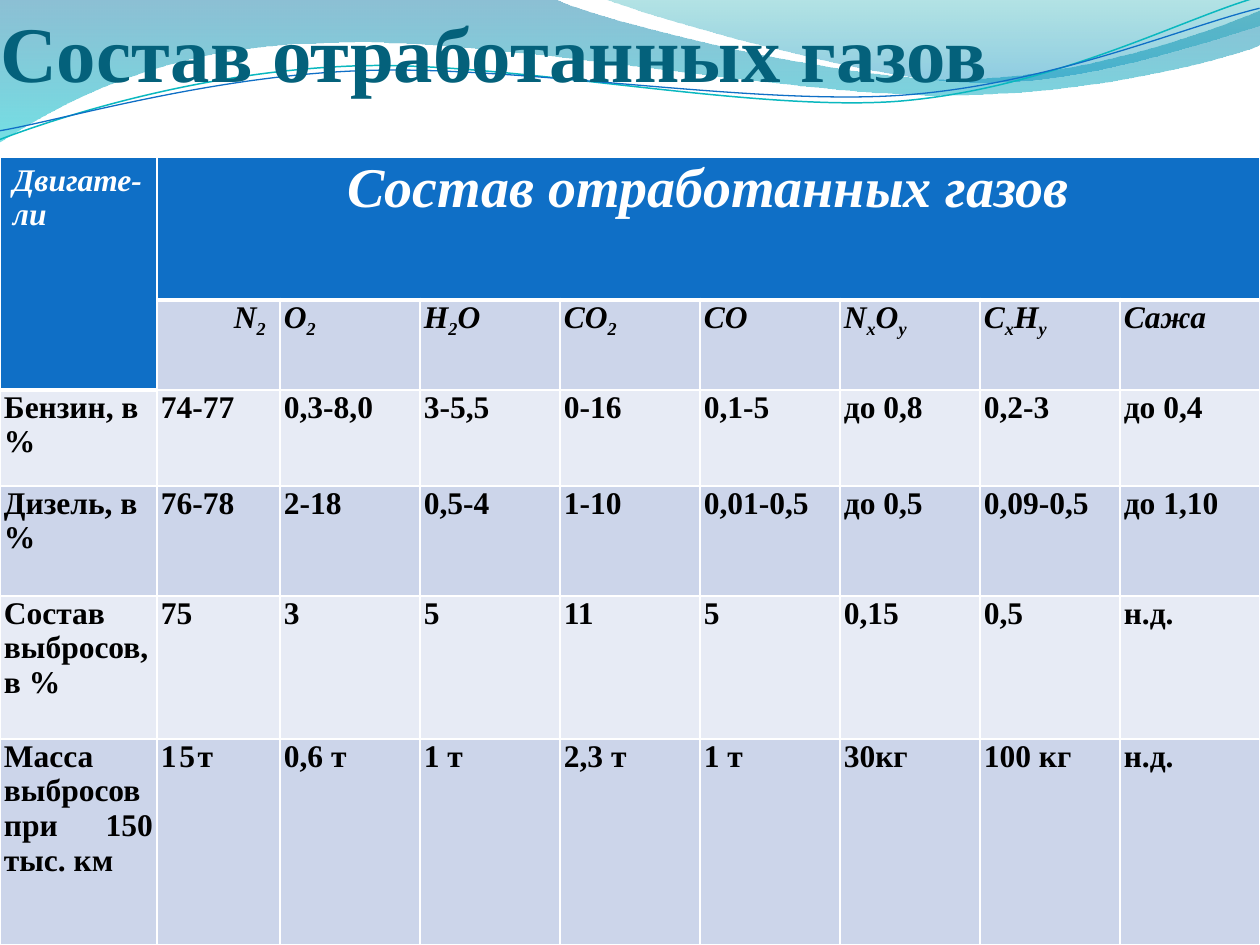
import pptx
import pptx.dml.color
import pptx.enum.text
import pptx.oxml
import pptx.oxml.ns
import pptx.util

PX = 914400 / 126
THEME = {
    "font": "Times New Roman", "title": "04617B", "header": "0F6FC6",
    "band_dark": "CCD5EA", "band_light": "E7EBF5", "white": "FFFFFF", "black": "000000",
    "title_size": 45, "heading_size": 32, "cell_size": 18,
}
ALIGN = pptx.enum.text.PP_ALIGN
NAMESPACE = pptx.oxml.ns.nsdecls("a")
qn = pptx.oxml.ns.qn
rgb = pptx.dml.color.RGBColor.from_string


def px(length):
    return pptx.util.Emu(round(length * PX))


def style_run(run, size, color, italic=False):
    run.font.name = THEME["font"]
    run.font.size = pptx.util.Pt(size)
    run.font.color.rgb = rgb(color)
    run.font.bold = True
    run.font.italic = italic


deck = pptx.Presentation()
deck.slide_width, deck.slide_height = px(1260), px(945)
page = deck.slides.add_slide(deck.slide_layouts[5])

# Waves: a pair of numbers is a straight step, six numbers are a Bezier step
# Each wave: start, steps, gradient stops (colour, opacity %) or None, line or None
waves = [
    ((0, 0), [(554, -1), (600, 21, 837, 79, 955, 79), (1075, 79, 1207, 33, 1260, 11),
              (1261, 45), (1239, 55, 1096, 96, 940, 95), (784, 95, 481, 35, 324, 43),
              (163, 45, 58, 105, -1, 142), (0, 0)],
     [("0074A1", 45), ("00C6CF", 55)], None),
    ((604, -1), [(641, 14, 859, 78, 969, 82), (1079, 87, 1211, 40, 1260, 26), (1260, 0),
                 (604, -1)],
     [("00A1A9", 30), ("008BBF", 45)], None),
    ((-3, 110), [(58, 90, 199, 52, 350, 53), (499, 53, 745, 118, 896, 114),
                 (1049, 109, 1184, 45, 1260, 27)], None, ("0AB8BF", 0.85)),
    ((-2, 101), [(57, 94, 207, 57, 357, 58), (509, 58, 750, 112, 902, 108),
                 (1052, 104, 1188, 52, 1262, 38)], None, ("0F6FC6", 0.75)),
]
for start, steps, stops, line in waves:
    corners = [(px(x), px(y)) for step in steps for x, y in zip(step[::2], step[1::2])]
    builder = page.shapes.build_freeform(px(start[0]), px(start[1]))
    builder.add_line_segments(corners, close=stops is not None)
    wave = builder.convert_to_shape()
    wave.shadow.inherit = False

    # Join each three points of a Bezier step into one curve
    segments = iter(list(wave._element.spPr.iter(qn("a:lnTo"))))
    for step in steps:
        first = next(segments)
        if len(step) == 6:
            curve = pptx.oxml.parse_xml(f"<a:cubicBezTo {NAMESPACE}/>")
            first.addprevious(curve)
            for segment in (first, next(segments), next(segments)):
                curve.append(segment[0])
                segment.getparent().remove(segment)

    if stops:
        wave.line.fill.background()
        wave.fill.gradient()
        wave.fill.gradient_angle = 270
        for stop, (color, opacity) in zip(wave.fill.gradient_stops, stops):
            stop.color.rgb = rgb(color)
        for element, (color, opacity) in zip(wave._element.spPr.iter(qn("a:srgbClr")), stops):
            element.append(pptx.oxml.parse_xml(
                f'<a:alpha {NAMESPACE} val="{opacity * 1000}"/>'))
    else:
        wave.rotation = 357.3
        wave.fill.background()
        wave.line.color.rgb = rgb(line[0])
        wave.line.width = pptx.util.Pt(line[1])

# Title, brought in front of the waves
title = page.shapes.title
page.shapes._spTree.append(title._element)
title.left, title.top, title.width, title.height = px(0), px(0), px(1260), px(98)
frame = title.text_frame
frame.text = "Состав отработанных газов"
frame.auto_size = pptx.enum.text.MSO_AUTO_SIZE.NONE
frame.vertical_anchor = pptx.enum.text.MSO_ANCHOR.BOTTOM
frame.margin_left = frame.margin_right = frame.margin_bottom = 0
frame.margin_top = px(6)
frame.paragraphs[0].alignment = ALIGN.LEFT
style_run(frame.paragraphs[0].runs[0], THEME["title_size"], THEME["title"])

# Table contents: every second piece between bars is a subscript
rows = [
    ["Двигате-ли", "Состав отработанных газов"] + [""] * 7,
    ["", "N|2", "О|2", "Н|2|О", "СО|2", "СО", "N|x|О|у", "С|х|Н|у", "Сажа"],
    ["Бензин, в %", "74-77", "0,3-8,0", "3-5,5", "0-16", "0,1-5", "до 0,8", "0,2-3", "до 0,4"],
    ["Дизель, в %", "76-78", "2-18", "0,5-4", "1-10", "0,01-0,5", "до 0,5", "0,09-0,5",
     "до 1,10"],
    ["Состав выбросов, в %", "75", "3", "5", "11", "5", "0,15", "0,5", "н.д."],
    ["Масса выбросов при 150 тыс. км", "15т", "0,6 т", "1 т", "2,3 т", "1 т", "30кг",
     "100 кг", "н.д."],
]
column_widths = [157, 123] + [140] * 7
row_heights = [143, 90, 96, 110, 143, 206]
alignments = {(0, 1): ALIGN.CENTER, (1, 2): ALIGN.JUSTIFY, (1, 3): ALIGN.JUSTIFY,
              (1, 7): ALIGN.JUSTIFY, (5, 0): ALIGN.JUSTIFY}
letter_spacing = {(1, 1): -100, (5, 1): 150}

table = page.shapes.add_table(len(rows), len(column_widths), px(0), px(157),
                              px(sum(column_widths)), px(sum(row_heights))).table
for column, width in zip(table.columns, column_widths):
    column.width = px(width)
for row, height in zip(table.rows, row_heights):
    row.height = px(height)
table.cell(0, 0).merge(table.cell(1, 0))
table.cell(0, 1).merge(table.cell(0, 8))

for r, texts in enumerate(rows):
    for c, text in enumerate(texts):
        cell = table.cell(r, c)
        is_header = r == 0 or (r, c) == (1, 0)
        is_corner = c == 0 and is_header
        cell.margin_left = cell.margin_right = px(13 if is_corner else 4)
        cell.margin_top = cell.margin_bottom = px(6 if is_corner else 0)
        band = THEME["band_light"] if r % 2 == 0 else THEME["band_dark"]
        cell.fill.solid()
        cell.fill.fore_color.rgb = rgb(THEME["header"] if is_header else band)

        # White borders, thicker under the header
        below_header = (r == 1 and c > 0) or (r, c) == (2, 0)
        borders = {"L": 1, "R": 1, "T": 3 if below_header else 1, "B": 3 if is_header else 1}
        properties = cell._tc.get_or_add_tcPr()
        for position, (side, points) in enumerate(borders.items()):
            properties.insert(position, pptx.oxml.parse_xml(
                f'<a:ln{side} {NAMESPACE} w="{points * 12700}"><a:solidFill>'
                f'<a:srgbClr val="{THEME["white"]}"/></a:solidFill></a:ln{side}>'))

        # Text
        if not text:
            continue
        para = cell.text_frame.paragraphs[0]
        para.alignment = alignments.get((r, c), ALIGN.LEFT)
        if (r, c) == (1, 1):
            para._p.get_or_add_pPr().set("indent", str(px(73)))
        for position, piece in enumerate(text.split("|")):
            span = para.add_run()
            span.text = piece
            style_run(span, THEME["heading_size" if (r, c) == (0, 1) else "cell_size"],
                      THEME["white" if is_header else "black"], italic=r < 2)
            if position % 2:
                span.font._element.set("baseline", "-25000")
            if (r, c) in letter_spacing:
                span.font._element.set("spc", str(letter_spacing[r, c]))

deck.save("out.pptx")
